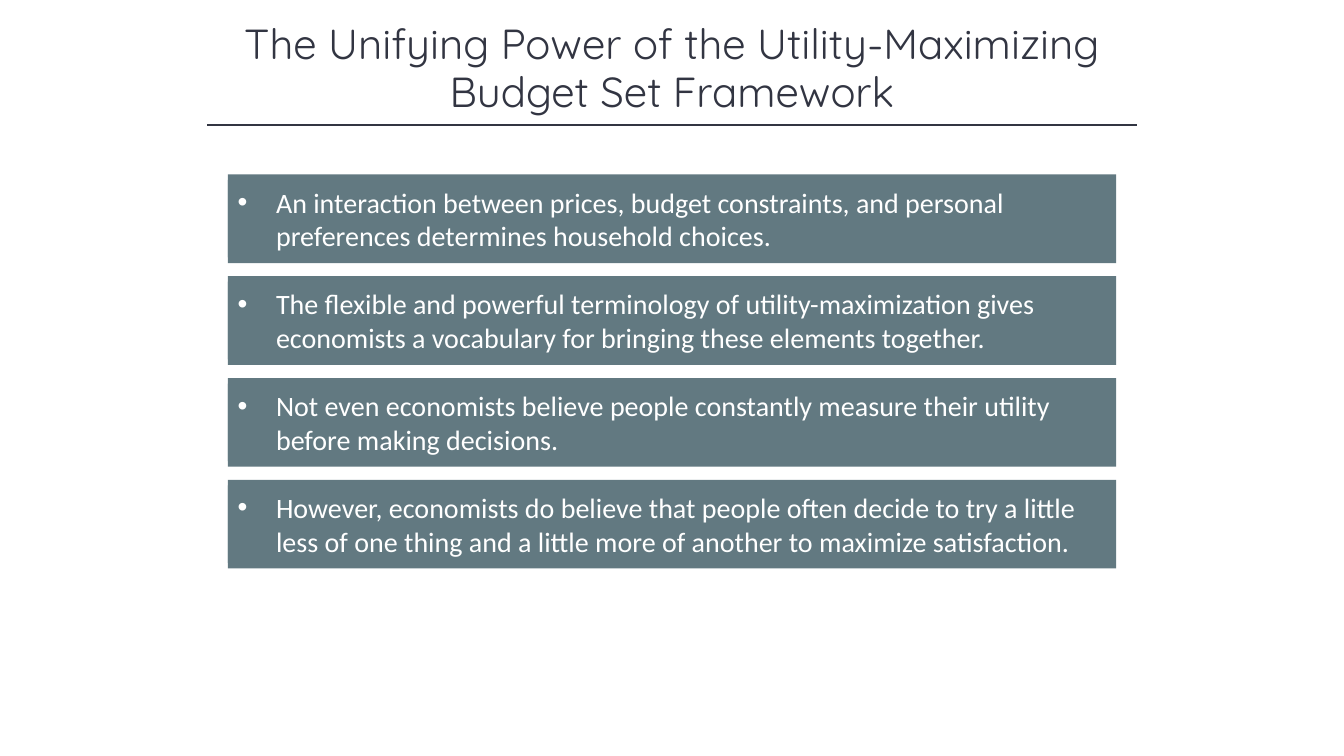
from lxml import etree
from pptx import Presentation
from pptx.dml.color import RGBColor
from pptx.enum.shapes import MSO_CONNECTOR, MSO_SHAPE
from pptx.enum.text import MSO_ANCHOR, PP_ALIGN
from pptx.oxml.ns import qn
from pptx.util import Inches, Pt

RECTANGLE = MSO_SHAPE.RECTANGLE
STRAIGHT = MSO_CONNECTOR.STRAIGHT
MIDDLE = MSO_ANCHOR.MIDDLE
CENTER, LEFT = PP_ALIGN.CENTER, PP_ALIGN.LEFT

HEADING = "The Unifying Power of the Utility-Maximizing Budget Set Framework"
POINTS = [
    "An interaction between prices, budget constraints, and personal preferences determines household choices.",
    "The flexible and powerful terminology of utility-maximization gives economists a vocabulary for bringing these elements together.",
    "Not even economists believe people constantly measure their utility before making decisions.",
    "However, economists do believe that people often decide to try a little less of one thing and a little more of another to maximize satisfaction.",
]
COLORS = {"ink": "323542", "band": "627981", "point": "FFFFFF"}

SLIDE_W, SLIDE_H = 13.33, 7.5
HEADING_W, HEADING_TOP, HEADING_H = 10, 0.13, 1.11
RULE_W = 9.22
BAND_W, BAND_H = 8.81, 0.88
BAND_TOP, BAND_PITCH = 1.73, 1.01
POINT_W, POINT_H = 8.54, 0.77
HANG = 0.38


def color(name):
    return RGBColor.from_string(COLORS[name])


def centered(width):
    return (SLIDE_W - width) / 2


def add_run(paragraph, words, font, size, ink):
    run = paragraph.add_run()
    run.text = words
    run.font.name = font
    run.font.size = Pt(size)
    run.font.color.rgb = color(ink)


def add_band(group, top, width, height):
    band = group.shapes.add_shape(
        RECTANGLE, Inches(centered(BAND_W)), Inches(top), Inches(width), Inches(height))
    band.shadow.inherit = False
    band.fill.solid()
    band.fill.fore_color.rgb = color("band")
    band.line.fill.background()
    return band


def add_bullet(paragraph):
    properties = paragraph._p.get_or_add_pPr()
    properties.set("marL", str(Inches(HANG)))
    properties.set("indent", str(-Inches(HANG)))
    etree.SubElement(properties, qn("a:buFont")).set("typeface", "Arial")
    etree.SubElement(properties, qn("a:buChar")).set("char", "•")


deck = Presentation()
deck.slide_width, deck.slide_height = Inches(SLIDE_W), Inches(SLIDE_H)
slide = deck.slides.add_slide(deck.slide_layouts[5])

heading = slide.shapes.title
heading.left, heading.top = Inches(centered(HEADING_W)), Inches(HEADING_TOP)
heading.width, heading.height = Inches(HEADING_W), Inches(HEADING_H)
heading.text_frame.word_wrap = True
heading.text_frame.vertical_anchor = MIDDLE
heading_line = heading.text_frame.paragraphs[0]
heading_line.alignment = CENTER
heading_line.line_spacing = 0.95
add_run(heading_line, HEADING, "Quicksand", 30, "ink")

rule_left, rule_y = centered(RULE_W), HEADING_TOP + HEADING_H
rule = slide.shapes.add_connector(
    STRAIGHT, Inches(rule_left), Inches(rule_y), Inches(rule_left + RULE_W), Inches(rule_y))
rule.line.color.rgb = color("ink")
rule.line.width = Pt(1)
etree.SubElement(rule._element.spPr, qn("a:effectLst"))

for row, words in enumerate(POINTS):
    top = BAND_TOP + row * BAND_PITCH
    group = slide.shapes.add_group_shape()
    add_band(group, top, BAND_W, BAND_H)
    point = add_band(group, top + (BAND_H - POINT_H) / 2, POINT_W, POINT_H)
    point.text_frame.word_wrap = True
    point.text_frame.vertical_anchor = MIDDLE
    point_line = point.text_frame.paragraphs[0]
    point_line.alignment = LEFT
    add_bullet(point_line)
    add_run(point_line, words, "Calibri", 20, "point")

deck.save("out.pptx")
